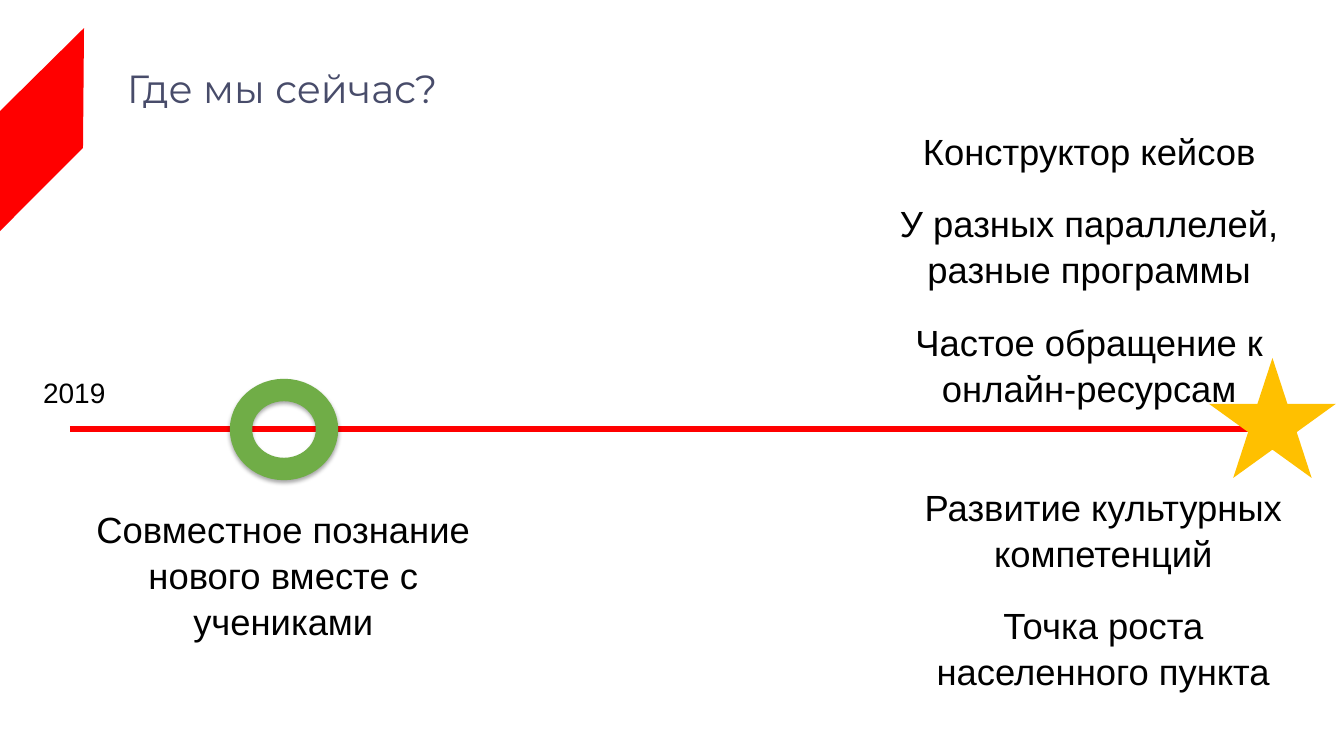
from lxml import etree
from pptx import Presentation, util as u
from pptx.dml.color import RGBColor
from pptx.enum import shapes, text
from pptx.oxml import parse_xml
from pptx.oxml.ns import nsdecls, qn

RED = RGBColor(0xFF, 0x00, 0x00)
GREEN = RGBColor(0x70, 0xAD, 0x47)
GOLD = RGBColor(0xFF, 0xC0, 0x00)
SLATE = RGBColor(0x48, 0x4C, 0x6A)
BLACK = RGBColor(0x00, 0x00, 0x00)
PX = 914400 / 100.8


def px(*lengths):
    return [u.Emu(round(length * PX)) for length in lengths]


def add_text(page, place, lines, font, size, color, align, spacing, anchor, wrap):
    box = page.shapes.add_textbox(*px(*place))
    frame = box.text_frame
    frame.word_wrap = wrap
    frame.vertical_anchor = anchor
    frame.margin_left, frame.margin_top, frame.margin_right, frame.margin_bottom = px(5, 5, 5, 5)
    for index, line in enumerate(lines):
        para = frame.paragraphs[0] if index == 0 else frame.add_paragraph()
        para.alignment = align
        para.line_spacing = spacing
        if index:
            para.space_before = u.Pt(19)
        span = para.add_run()
        span.text = line
        span.font.name = font
        span.font.size = u.Pt(size)
        span.font.color.rgb = color


deck = Presentation()
deck.slide_width, deck.slide_height = px(1344, 756)
page = deck.slides.add_slide(deck.slide_layouts[6])

builder = page.shapes.build_freeform(0, 231, scale=PX)
builder.add_line_segments([(0, 111), (84, 28), (83, 148)], close=True)
ribbon = builder.convert_to_shape()
ribbon.shadow.inherit = False
ribbon.fill.solid()
ribbon.fill.fore_color.rgb = RED
ribbon.line.fill.background()

LEFT, CENTER = text.PP_ALIGN.LEFT, text.PP_ALIGN.CENTER
TOP, MIDDLE = text.MSO_ANCHOR.TOP, text.MSO_ANCHOR.MIDDLE
add_text(page, (122, 40, 963, 101), ["Где мы сейчас?"],
         "Montserrat", 28, SLATE, LEFT, 0.9, MIDDLE, True)

timeline = page.shapes.add_connector(shapes.MSO_CONNECTOR.STRAIGHT, *px(70, 429, 1274, 429))
timeline.line.color.rgb = RED
timeline.line.width = u.Pt(4.5)
etree.SubElement(timeline.line._get_or_add_ln(), qn("a:tailEnd"), type="stealth")
etree.SubElement(timeline._element.spPr, qn("a:effectLst"))

add_text(page, (38, 370, 74, 41), ["2019"],
         "Arial", 20, BLACK, LEFT, 1.0, TOP, False)

ring = page.shapes.add_shape(shapes.MSO_SHAPE.OVAL, *px(241, 390, 86, 79))
ring.fill.background()
ring.line.color.rgb = GREEN
ring.line.width = u.Pt(16)
ring._element.spPr.append(parse_xml(
    f'<a:effectLst {nsdecls("a")}>'
    '<a:outerShdw blurRad="38100" dist="22860" dir="5400000" rotWithShape="0">'
    '<a:srgbClr val="000000"><a:alpha val="35000"/></a:srgbClr>'
    '</a:outerShdw></a:effectLst>'))

star = page.shapes.add_shape(shapes.MSO_SHAPE.STAR_5_POINT, *px(1209, 358, 127, 120))
star.shadow.inherit = False
star.fill.solid()
star.fill.fore_color.rgb = GOLD
star.line.fill.background()

stages = [
    ((874, 122, 431, 279), ["Конструктор кейсов",
                            "У разных параллелей, разные программы",
                            "Частое обращение к онлайн-ресурсам"]),
    ((68, 500, 431, 139), ["Совместное познание нового вместе с учениками"]),
    ((888, 478, 431, 209), ["Развитие культурных компетенций",
                            "Точка роста населенного пункта"]),
]
for place, lines in stages:
    add_text(page, place, lines, "Arial", 26, BLACK, CENTER, 1.05, TOP, True)

deck.save("out.pptx")
